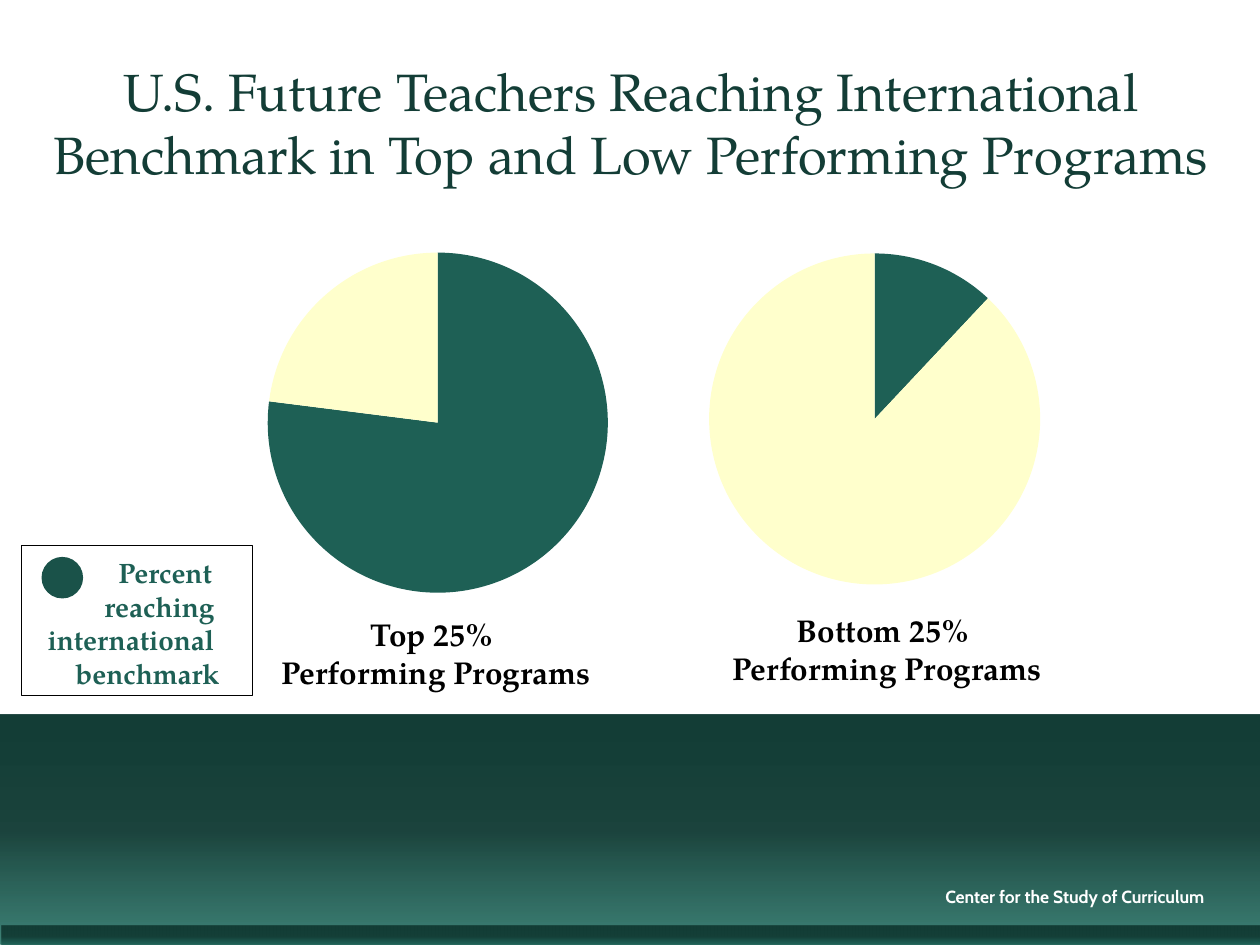
import lxml.etree
import pptx
import pptx.chart.data
import pptx.dml.color
import pptx.enum.chart
import pptx.enum.shapes
import pptx.enum.text
import pptx.oxml
import pptx.oxml.ns
import pptx.util

Inches = pptx.util.Inches
RGBColor = pptx.dml.color.RGBColor
ALIGN = pptx.enum.text.PP_ALIGN
SHAPE = pptx.enum.shapes.MSO_SHAPE

DARK = RGBColor(0x13, 0x3D, 0x36)
MID = RGBColor(0x23, 0x71, 0x64)
GREEN = RGBColor(0x1E, 0x60, 0x55)
DOT = RGBColor(0x1A, 0x52, 0x49)
CREAM = RGBColor(0xFF, 0xFF, 0xCC)
WHITE = RGBColor(0xFF, 0xFF, 0xFF)
BLACK = RGBColor(0, 0, 0)
SERIF = "TeX Gyre Pagella"

deck = pptx.Presentation()
deck.slide_width, deck.slide_height = Inches(10), Inches(7.5)
slide = deck.slides.add_slide(deck.slide_layouts[6])
shapes = slide.shapes


def add_text(text, box, size, color, font=SERIF, bold=True,
             align=ALIGN.CENTER, indents=()):
    """Add a text box; indents holds one left margin in inches per paragraph."""
    frame = shapes.add_textbox(*map(Inches, box)).text_frame
    frame.word_wrap = True
    frame.text = text
    for para in frame.paragraphs:
        para.alignment = align
        for run in para.runs:
            run.font.name = font
            run.font.size = pptx.util.Pt(size)
            run.font.bold = bold
            run.font.color.rgb = color
    for para, indent in zip(frame.paragraphs, indents):
        para._p.get_or_add_pPr().set("marL", str(Inches(indent)))


# Footer bands, fading from dark to mid green
for left, top, height in ((0, 5.67, 1.83), (0.01, 7.35, 0.17)):
    band = shapes.add_shape(SHAPE.RECTANGLE, Inches(left), Inches(top),
                            Inches(10), Inches(height))
    band.shadow.inherit = False
    band.line.fill.background()
    band.fill.gradient()
    band.fill.gradient_angle = 270
    stops = band._element.spPr.find(".//" + pptx.oxml.ns.qn("a:gsLst"))
    for stop in list(stops):
        stops.remove(stop)
    for pos, color, alpha in ((0, DARK, 100), (50, DARK, 96), (100, MID, 87)):
        stops.append(pptx.oxml.parse_xml(
            f'<a:gs {pptx.oxml.ns.nsdecls("a")} pos="{pos * 1000}">'
            f'<a:srgbClr val="{color}"><a:alpha val="{alpha * 1000}"/>'
            '</a:srgbClr></a:gs>'))

add_text("Center for the Study of Curriculum", (7.25, 6.98, 2.56, 0.27),
         10, WHITE, font="Cabin")
add_text("U.S. Future Teachers Reaching International Benchmark "
         "in Top and Low Performing Programs", (0.01, 0.42, 10, 1.11),
         30, DARK, bold=False)

# Pies: frame, plot area as shares of the frame, values
pies = (
    ((1, 1.87, 4.5, 3), (0.25, 0.04, 0.6, 0.91), (77, 23)),
    ((3.92, 1.91, 4.38, 2.92), (0.39, 0.03, 0.6, 0.91), (12, 88)),
)
for box, plot, values in pies:
    data = pptx.chart.data.CategoryChartData()
    data.categories = ["1", "2"]
    data.add_series("Series 1", values)
    chart = shapes.add_chart(pptx.enum.chart.XL_CHART_TYPE.PIE,
                             *map(Inches, box), data).chart
    chart.has_title = False
    chart.has_legend = False
    chart.font.name = "Calibri"
    chart.font.size = pptx.util.Pt(18)
    chart.font.color.rgb = BLACK
    for i, color in enumerate((GREEN, CREAM)):
        slice_format = chart.plots[0].series[0].points[i].format
        slice_format.fill.solid()
        slice_format.fill.fore_color.rgb = color
        slice_format.line.fill.background()

    root = chart._chartSpace
    area = root.find(".//" + pptx.oxml.ns.qn("c:plotArea"))
    for old in area.findall(pptx.oxml.ns.qn("c:layout")):
        area.remove(old)
    sizes = "".join(f'<c:{tag} val="{share}"/>'
                    for tag, share in zip("xywh", plot))
    area.insert(0, pptx.oxml.parse_xml(
        f'<c:layout {pptx.oxml.ns.nsdecls("c")}><c:manualLayout>'
        '<c:layoutTarget val="inner"/><c:xMode val="edge"/>'
        f'<c:yMode val="edge"/>{sizes}</c:manualLayout></c:layout>'))
    root.find(pptx.oxml.ns.qn("c:chart")).addnext(pptx.oxml.parse_xml(
        f'<c:spPr {pptx.oxml.ns.nsdecls("c", "a")}><a:noFill/>'
        '<a:ln><a:noFill/></a:ln></c:spPr>'))

for rank, left, top in (("Top", 2, 4.83), ("Bottom", 5.58, 4.8)):
    add_text(f"{rank} 25% \vPerforming Programs", (left, top, 2.92, 0.71),
             18, BLACK)

# Legend
add_text("Percent\nreaching\ninternational\nbenchmark",
         (0.17, 4.36, 1.88, 1.18), 16, GREEN, align=ALIGN.LEFT,
         indents=(0.67, 0.56, 0.11, 0.33))
dot = shapes.add_shape(SHAPE.OVAL, Inches(0.33), Inches(4.42),
                       Inches(0.33), Inches(0.33))
dot.shadow.inherit = False
dot.fill.solid()
dot.fill.fore_color.rgb = DOT
dot.line.fill.background()
frame = shapes.add_shape(SHAPE.RECTANGLE, Inches(0.17), Inches(4.33),
                         Inches(1.83), Inches(1.19))
frame.shadow.inherit = False
frame.fill.background()
frame.line.color.rgb = BLACK
frame.line.width = pptx.util.Pt(0.25)

deck.save("out.pptx")
